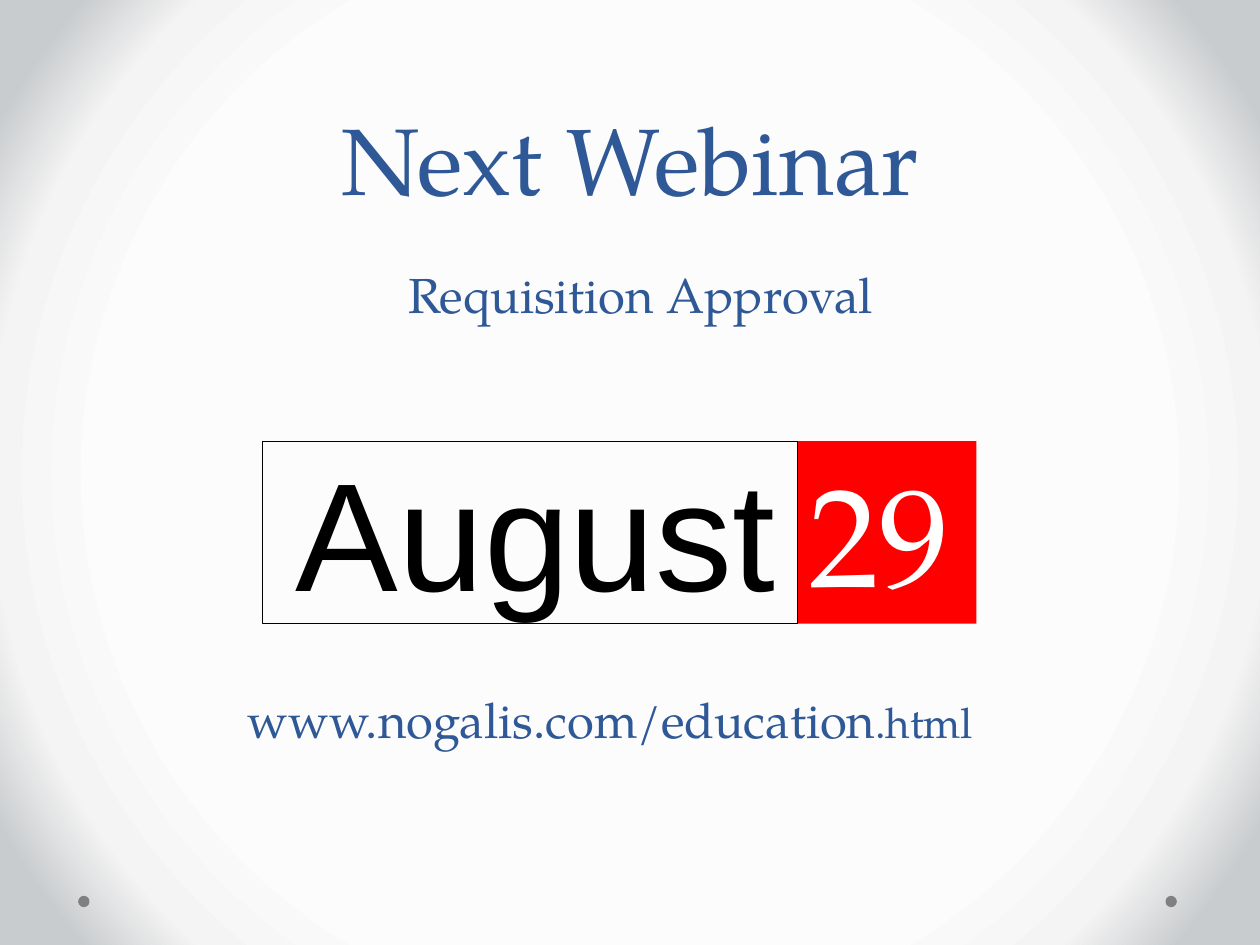
from lxml import etree
from pptx import Presentation
from pptx.dml.color import RGBColor
from pptx.enum.shapes import MSO_SHAPE
from pptx.enum.text import MSO_ANCHOR, MSO_AUTO_SIZE, PP_ALIGN
from pptx.oxml.ns import qn
from pptx.util import Inches, Pt

RECT, OVAL = MSO_SHAPE.RECTANGLE, MSO_SHAPE.OVAL
TOP, BOTTOM = MSO_ANCHOR.TOP, MSO_ANCHOR.BOTTOM
GROW, NONE = MSO_AUTO_SIZE.SHAPE_TO_FIT_TEXT, MSO_AUTO_SIZE.NONE
LEFT, CENTER = PP_ALIGN.LEFT, PP_ALIGN.CENTER
SERIF, SANS = "TeX Gyre Pagella", "Arial"
HEX = {"blue": "2F5897", "red": "FF0000", "black": "000000",
       "white": "FFFFFF", "dot": "808080"}
GLOW = [(66, "FCFCFC"), (81, "F4F4F4"), (92, "C8CCCE")]
COLOR = {name: RGBColor.from_string(code) for name, code in HEX.items()}

deck = Presentation()
deck.slide_width, deck.slide_height = Inches(10), Inches(7.5)
slide = deck.slides.add_slide(deck.slide_layouts[5])
shapes = slide.shapes


def write(shape, text, size, color, font=SERIF, align=LEFT, anchor=TOP,
          fit=GROW, wrap=True):
    frame = shape.text_frame
    frame.word_wrap, frame.auto_size = wrap, fit
    frame.vertical_anchor = anchor
    line = frame.paragraphs[0]
    line.text, line.alignment = text, align
    line.font.name, line.font.size = font, Pt(size)
    line.font.color.rgb = COLOR[color]
    return line


def draw(kind, box, fill=None, edge=None):
    shape = shapes.add_shape(kind, *map(Inches, box))
    shape.shadow.inherit = False
    if fill:
        shape.fill.solid()
        shape.fill.fore_color.rgb = COLOR[fill]
    else:
        shape.fill.background()
    if edge:
        shape.line.color.rgb = COLOR[edge]
        shape.line.width = Pt(0.25)
    else:
        shape.line.fill.background()
    return shape


# Round glow behind everything
back = slide.background.fill
back.gradient()
grad = slide.background._cSld.find(".//" + qn("a:gradFill"))
for part in list(grad):
    grad.remove(part)
stops = etree.SubElement(grad, qn("a:gsLst"))
for share, code in GLOW:
    stop = etree.SubElement(stops, qn("a:gs"), pos=str(share * 1000))
    etree.SubElement(stop, qn("a:srgbClr"), val=code)
path = etree.SubElement(grad, qn("a:path"), path="circle")
etree.SubElement(path, qn("a:fillToRect"),
                 {side: "50000" for side in "ltrb"})

for left in (9.25, 0.62):
    draw(OVAL, (left, 7.11, 0.09, 0.09), "dot")

title = shapes.title
title.left, title.top, title.width, title.height = map(
    Inches, (0.5, 0, 9, 1.75))
head = write(title, "Next Webinar", 54, "blue", align=CENTER,
             anchor=BOTTOM, fit=NONE)
head.line_spacing = Pt(58)

# Date: month in a frame, day on red
top, high, split = 3.5, 1.45, 6.33
month = shapes.add_textbox(*map(Inches, (2.25, 3.42, 6, 1.58)))
write(month, "August", 88, "black", SANS)
day = draw(RECT, (split, top, 1.42, high), "red")
write(day, "29", 80, "white")
draw(RECT, (split - 4.25, top, 4.25, high), edge="black")

site = shapes.add_textbox(*map(Inches, (1.87, 5.42, 5.96, 0.57)))
link = write(site, "www.nogalis.com/education", 28, "blue", wrap=False)
tail = link.add_run()
tail.text, tail.font.size = ".html", Pt(24)

topic = shapes.add_textbox(*map(Inches, (3.14, 2.05, 3.94, 0.57)))
write(topic, "Requisition Approval", 28, "blue", wrap=False)

deck.save("out.pptx")
